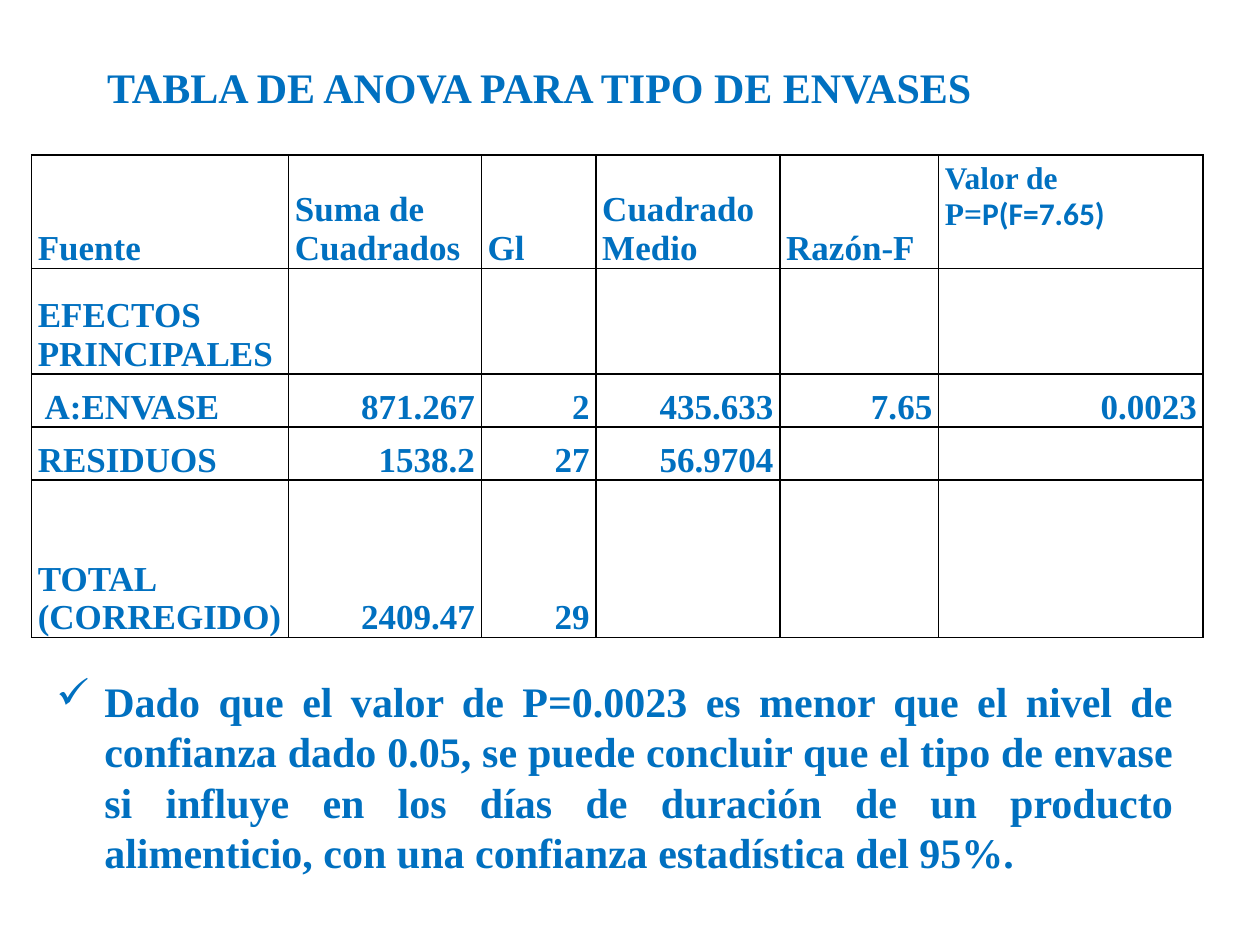
from lxml import etree
from pptx import Presentation
from pptx import util as u
from pptx.dml.color import RGBColor
from pptx.enum import text
from pptx.oxml.ns import qn

HEADING = "TABLA DE ANOVA PARA TIPO DE ENVASES"
ANOVA = [
    ["Fuente", "Suma de Cuadrados", "Gl", "Cuadrado Medio", "Razón-F", ""],
    ["EFECTOS PRINCIPALES", "", "", "", "", ""],
    [" A:ENVASE", "871.267", "2", "435.633", "7.65", "0.0023"],
    ["RESIDUOS", "1538.2", "27", "56.9704", "", ""],
    ["TOTAL (CORREGIDO)", "2409.47", "29", "", "", ""],
]
CONCLUSION = (
    "Dado que el valor de P=0.0023 es menor que el nivel de confianza dado 0.05, "
    "se puede concluir que el tipo de envase si influye en los días de duración "
    "de un producto alimenticio, con una confianza estadística del 95%."
)
COLUMN_WIDTHS = [2.04, 1.53, 0.91, 1.46, 1.26, 2.1]
ROW_HEIGHTS = [0.9, 0.84, 0.42, 0.42, 1.25]
THEME = {
    "ink": "0070C0", "border": "000000", "font": "Times New Roman",
    "formula_font": "Calibri", "body": 24, "cell": 20, "p_value": 18,
}
P_VALUE_HEADER = [("Valor de P=", THEME["font"]), ("P(F=7.65)", THEME["formula_font"])]


def style(font, size, name=THEME["font"]):
    font.name, font.size, font.bold = name, u.Pt(size), True
    font.color.rgb = RGBColor.from_string(THEME["ink"])


def place(part, left, top, width, height):
    part.left, part.top = u.Inches(left), u.Inches(top)
    part.width, part.height = u.Inches(width), u.Inches(height)


def add_borders(cell):
    properties = cell._tc.get_or_add_tcPr()
    for position, side in enumerate(("a:lnL", "a:lnR", "a:lnT", "a:lnB")):
        line = etree.Element(qn(side), w=str(u.Pt(1)))
        fill = etree.SubElement(line, qn("a:solidFill"))
        etree.SubElement(fill, qn("a:srgbClr"), val=THEME["border"])
        properties.insert(position, line)


def fill_cell(cell, value, is_number):
    cell.fill.background()
    add_borders(cell)
    cell.vertical_anchor = text.MSO_ANCHOR.BOTTOM
    cell.margin_left = cell.margin_right = u.Inches(0.05)
    cell.margin_top = cell.margin_bottom = 0
    paragraph = cell.text_frame.paragraphs[0]
    paragraph.text = value
    paragraph.alignment = text.PP_ALIGN.RIGHT if is_number else text.PP_ALIGN.LEFT
    style(paragraph.font, THEME["cell"])


def add_anova(slide):
    anova = slide.shapes.add_table(
        len(ROW_HEIGHTS), len(COLUMN_WIDTHS), u.Inches(0.25), u.Inches(1.23),
        u.Inches(sum(COLUMN_WIDTHS)), u.Inches(sum(ROW_HEIGHTS))).table
    anova.first_row = anova.horz_banding = False
    for column, width in zip(anova.columns, COLUMN_WIDTHS):
        column.width = u.Inches(width)
    for row, height in zip(anova.rows, ROW_HEIGHTS):
        row.height = u.Inches(height)
    for r, values in enumerate(ANOVA):
        for c, value in enumerate(values):
            fill_cell(anova.cell(r, c), value, r > 0 and c > 0)
    p_value = anova.cell(0, len(COLUMN_WIDTHS) - 1)
    p_value.margin_bottom = u.Inches(0.27)
    for words, font_name in P_VALUE_HEADER:
        run = p_value.text_frame.paragraphs[0].add_run()
        run.text = words
        style(run.font, THEME["p_value"], font_name)


def add_heading(slide):
    heading = slide.shapes.title
    place(heading, 0.75, 0.44, 8.82, 0.51)
    frame = heading.text_frame
    frame.text = HEADING
    frame.auto_size = text.MSO_AUTO_SIZE.NONE
    frame.vertical_anchor = text.MSO_ANCHOR.TOP
    frame.paragraphs[0].alignment = text.PP_ALIGN.LEFT
    style(frame.paragraphs[0].font, THEME["body"])


def add_conclusion(slide):
    conclusion = slide.shapes.add_textbox(0, 0, 0, 0)
    place(conclusion, 0.35, 5.3, 9.06, 1.72)
    frame = conclusion.text_frame
    frame.word_wrap = True
    frame.vertical_anchor = text.MSO_ANCHOR.MIDDLE
    paragraph = frame.paragraphs[0]
    paragraph.text = CONCLUSION
    paragraph.alignment = text.PP_ALIGN.JUSTIFY
    style(paragraph.font, THEME["body"])
    properties = paragraph._p.get_or_add_pPr()
    properties.set("marL", str(u.Inches(0.38)))
    properties.set("indent", str(-u.Inches(0.38)))
    bullet = etree.Element(qn("a:buChar"), char="✓")
    properties.insert(0, bullet)


def main():
    deck = Presentation()
    deck.slide_width, deck.slide_height = u.Inches(10), u.Inches(7.5)
    slide = deck.slides.add_slide(deck.slide_layouts[5])
    add_anova(slide)
    add_heading(slide)
    add_conclusion(slide)
    deck.save("out.pptx")


if __name__ == "__main__":
    main()
